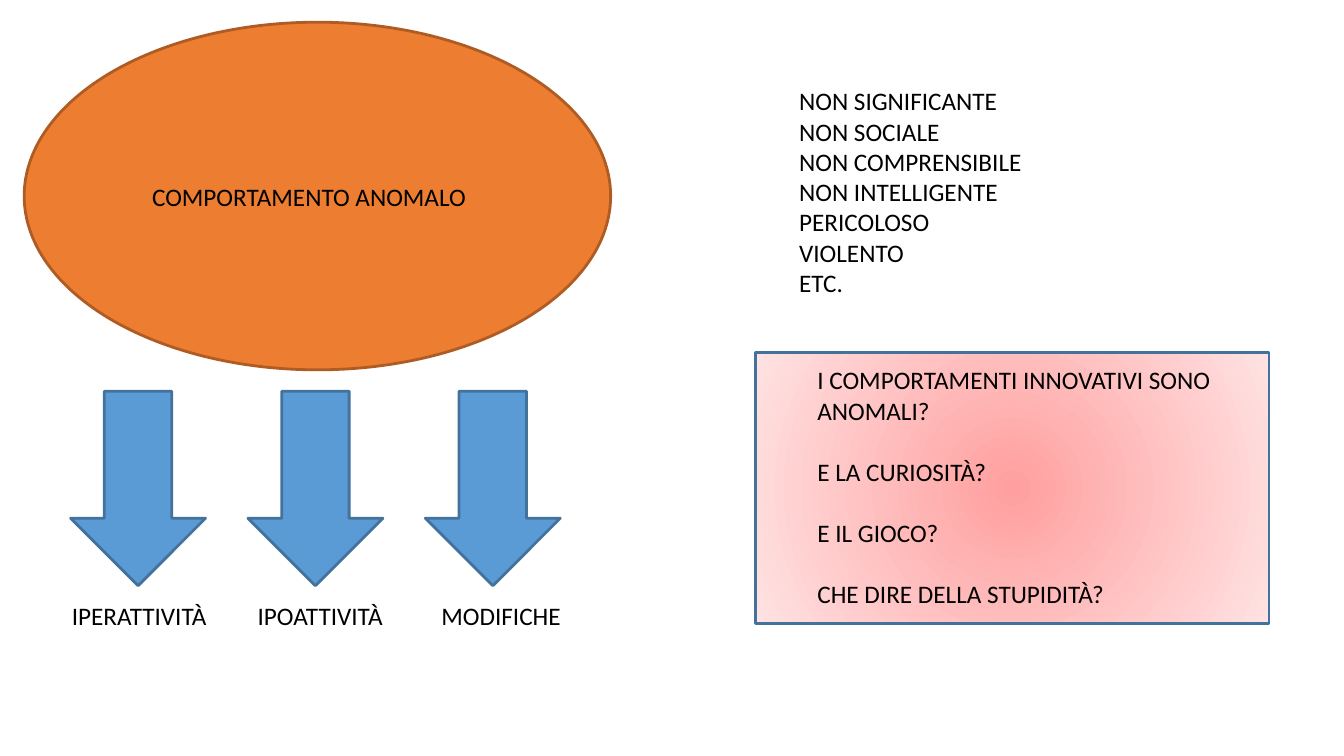
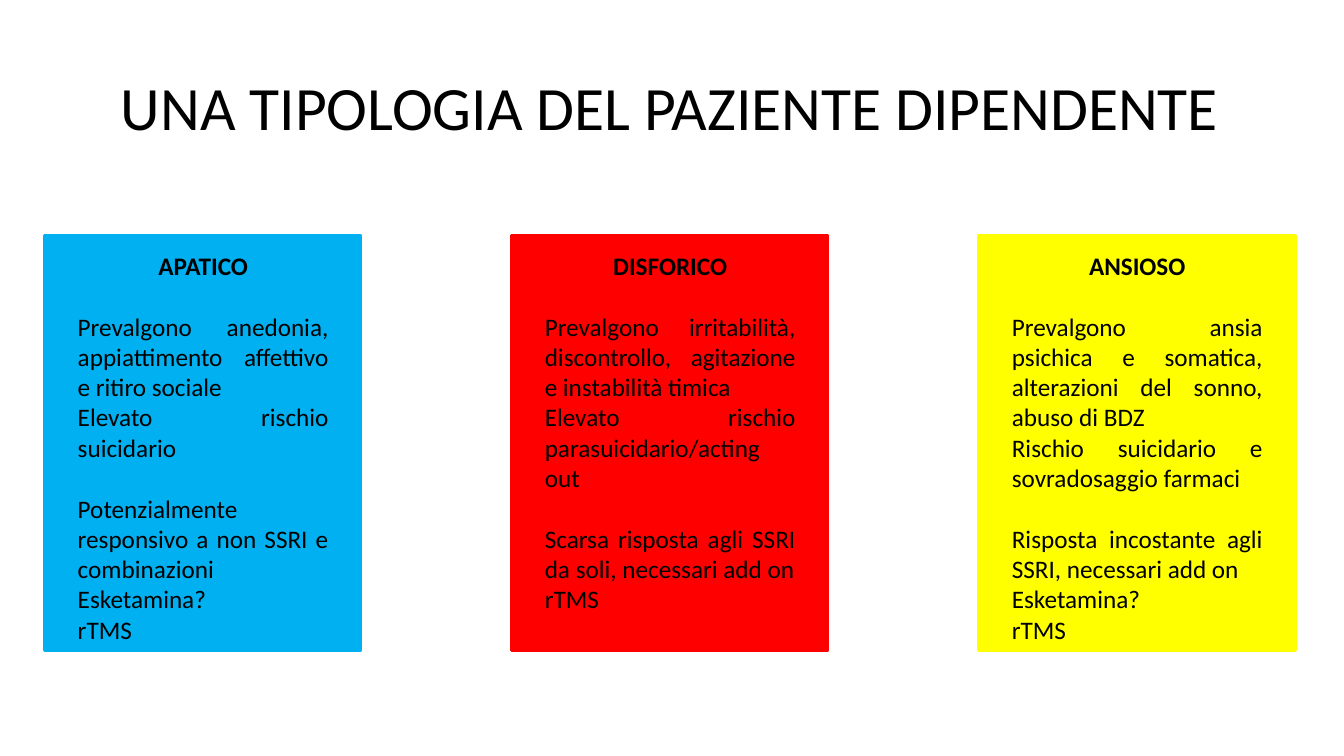
from lxml import etree
from pptx import Presentation
from pptx.dml.color import RGBColor
from pptx.enum.shapes import MSO_SHAPE
from pptx.enum.text import MSO_ANCHOR, PP_ALIGN
from pptx.oxml.ns import qn
from pptx.util import Cm, Pt

ELLIPSE, ARROW, RECT = MSO_SHAPE.OVAL, MSO_SHAPE.DOWN_ARROW, MSO_SHAPE.RECTANGLE
LEFT, CENTER, JUSTIFY = PP_ALIGN.LEFT, PP_ALIGN.CENTER, PP_ALIGN.JUSTIFY
TOP, MIDDLE = MSO_ANCHOR.TOP, MSO_ANCHOR.MIDDLE

FONT = "Calibri"
BODY_SIZE = 18
TITLE_SIZE = 44
LINE_GAP = 22  # height of one body line, in points
INSETS = (0.25, 0.13, 0.25, 0.13)

COLORS = {
    "text": "000000",
    "orange": "ED7D31", "orange edge": "AF5C24",
    "blue": "5B9BD5", "blue edge": "43729D",
    "glow centre": "FF9F9F", "glow rim": "FFE2E2",
    "apathetic": "00B0F0", "dysphoric": "FF0000", "anxious": "FFFF00",
}

BEHAVIOUR = "COMPORTAMENTO ANOMALO"
TRAITS = ["NON SIGNIFICANTE", "NON SOCIALE", "NON COMPRENSIBILE",
          "NON INTELLIGENTE", "PERICOLOSO", "VIOLENTO", "ETC."]
OUTCOMES = ["IPERATTIVITÀ", "IPOATTIVITÀ", "MODIFICHE"]
QUESTIONS = ["I COMPORTAMENTI INNOVATIVI SONO ANOMALI?", "E LA CURIOSITÀ?",
             "E IL GIOCO?", "CHE DIRE DELLA STUPIDITÀ?"]

TITLE = "UNA TIPOLOGIA DEL PAZIENTE DIPENDENTE"
# colour, heading, clinical picture, treatment
PATIENT_TYPES = [
    ("apathetic", "APATICO",
     ["Prevalgono anedonia, appiattimento affettivo e ritiro sociale",
      "Elevato rischio suicidario"],
     ["Potenzialmente responsivo a non SSRI e combinazioni",
      "Esketamina?", "rTMS"]),
    ("dysphoric", "DISFORICO",
     ["Prevalgono irritabilità, discontrollo, agitazione e instabilità timica",
      "Elevato rischio parasuicidario/acting out"],
     ["Scarsa risposta agli SSRI da soli, necessari add on", "rTMS"]),
    ("anxious", "ANSIOSO",
     ["Prevalgono ansia psichica e somatica, alterazioni del sonno, abuso di BDZ",
      "Rischio suicidario e sovradosaggio farmaci"],
     ["Risposta incostante agli SSRI, necessari add on",
      "Esketamina?", "rTMS"]),
]


def rgb(name):
    return RGBColor.from_string(COLORS[name])


def write(shape, groups, align=LEFT, size=BODY_SIZE, anchor=TOP, insets=INSETS):
    """Write groups of paragraphs, with one line of space between groups."""
    frame = shape.text_frame
    frame.word_wrap = True
    frame.vertical_anchor = anchor
    (frame.margin_left, frame.margin_top,
     frame.margin_right, frame.margin_bottom) = map(Cm, insets)
    for group_index, group in enumerate(groups):
        for line_index, line in enumerate(group):
            first = group_index == line_index == 0
            para = frame.paragraphs[0] if first else frame.add_paragraph()
            para.text = line
            para.alignment = align
            para.space_before = Pt(LINE_GAP if line_index == 0 and not first else 0)
            para.font.name = FONT
            para.font.size = Pt(size)
            para.font.color.rgb = rgb("text")
    return frame.paragraphs


def add_text(page, place, groups, **style):
    box = page.shapes.add_textbox(*map(Cm, place))
    return write(box, groups, **style)


def add_shape(page, kind, place, fill, edge):
    shape = page.shapes.add_shape(kind, *map(Cm, place))
    shape.shadow.inherit = False
    shape.fill.solid()
    shape.fill.fore_color.rgb = rgb(fill)
    shape.line.color.rgb = rgb(edge)
    shape.line.width = Pt(2)
    return shape


def fill_radially(shape, centre, rim):
    shape.fill.gradient()
    for stop, color in zip(shape.fill.gradient_stops, (centre, rim)):
        stop.color.rgb = rgb(color)
    gradient = shape.fill._xPr.find(qn("a:gradFill"))
    gradient.remove(gradient.find(qn("a:lin")))
    circle = etree.SubElement(gradient, qn("a:path"), {"path": "circle"})
    etree.SubElement(circle, qn("a:fillToRect"), dict.fromkeys("ltrb", "50000"))


def build_behaviour(page):
    ellipse = add_shape(page, ELLIPSE, (0.61, 0.56, 14.78, 8.76),
                        "orange", "orange edge")
    write(ellipse, [[BEHAVIOUR]], anchor=MIDDLE, insets=(1.06, 0.13, 0, 0.13))
    add_text(page, (19.89, 2.03, 13.08, 5.59), [TRAITS], align=JUSTIFY)

    for index, outcome in enumerate(OUTCOMES):
        add_shape(page, ARROW, (1.78 + index * 4.47, 9.86, 3.4, 4.9),
                  "blue", "blue edge")
        add_text(page, (1.31 + index * 4.56, 14.99, 4.4, 1.02),
                 [[outcome]], align=CENTER)

    panel = add_shape(page, RECT, (19.05, 8.89, 12.93, 6.83),
                      "glow rim", "blue edge")
    fill_radially(panel, "glow centre", "glow rim")
    write(panel, [[question] for question in QUESTIONS],
          insets=(1.55, 0.3, 1.35, 0))


def build_patient_types(page):
    title = add_text(page, (2.29, 0.94, 29.21, 3.68), [[TITLE]],
                     align=CENTER, size=TITLE_SIZE, anchor=MIDDLE)
    title[0].line_spacing = 0.9

    for index, (color, heading, picture, treatment) in enumerate(PATIENT_TYPES):
        card = add_shape(page, RECT, (1.12 + index * 11.77, 5.94, 7.98, 10.46),
                         color, color)
        paras = write(card, [[heading], picture, treatment], align=JUSTIFY,
                      insets=(0.84, 0.36, 0.82, 0))
        paras[0].alignment = CENTER
        paras[0].font.bold = True


def main():
    deck = Presentation()
    deck.slide_width, deck.slide_height = Cm(33.87), Cm(19.05)
    blank = deck.slide_layouts[6]
    for build in (build_behaviour, build_patient_types):
        build(deck.slides.add_slide(blank))
    deck.save("out.pptx")


if __name__ == "__main__":
    main()
